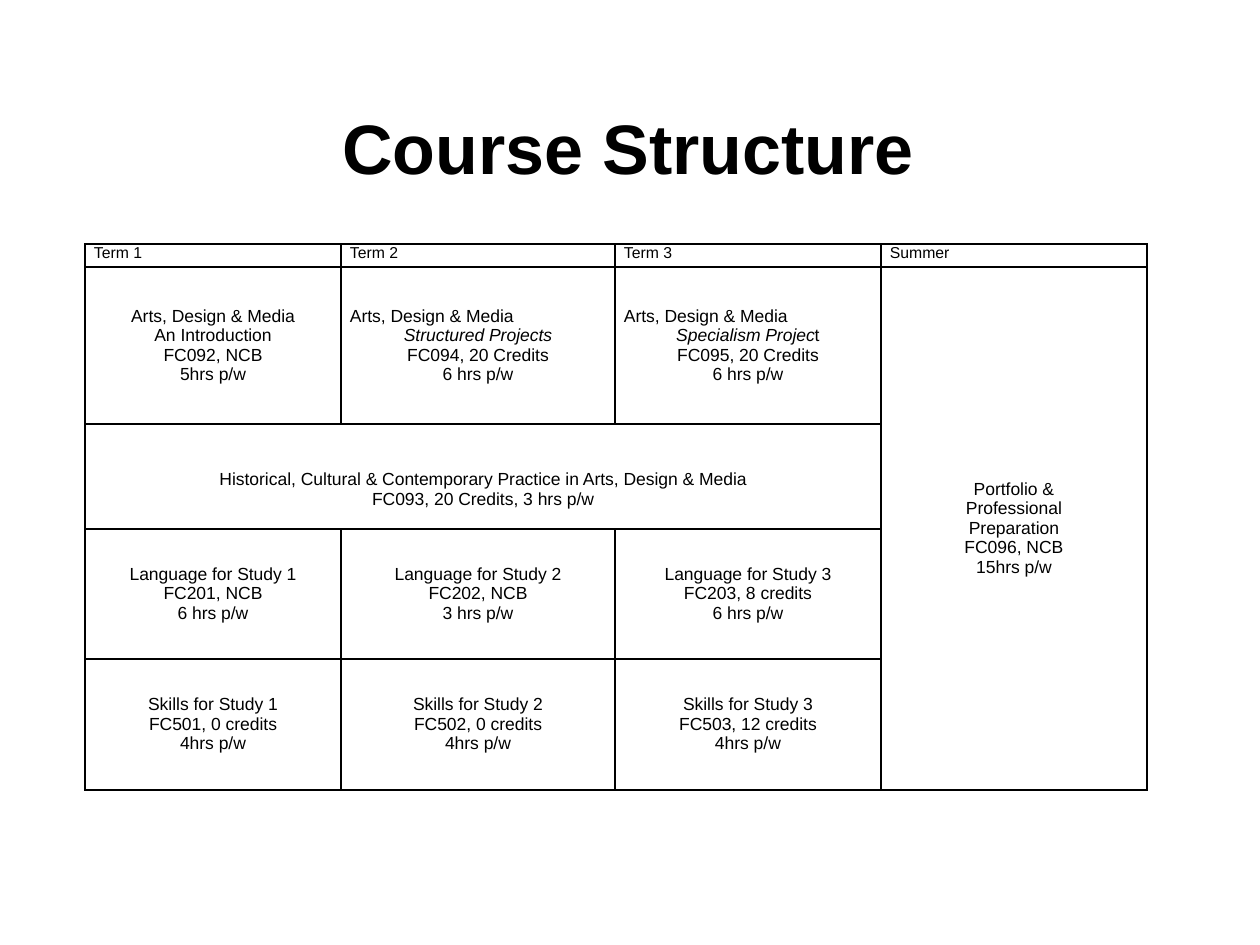
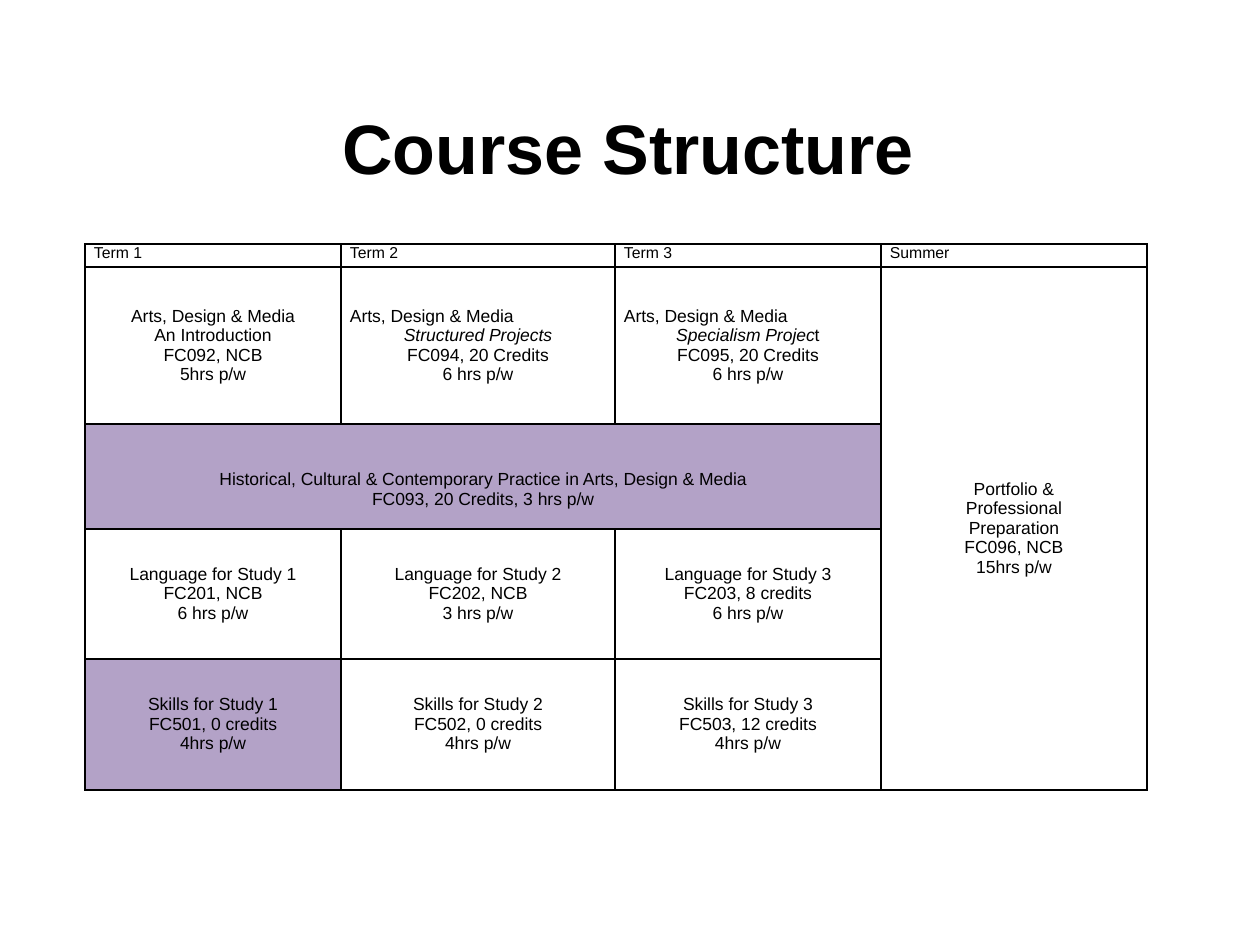
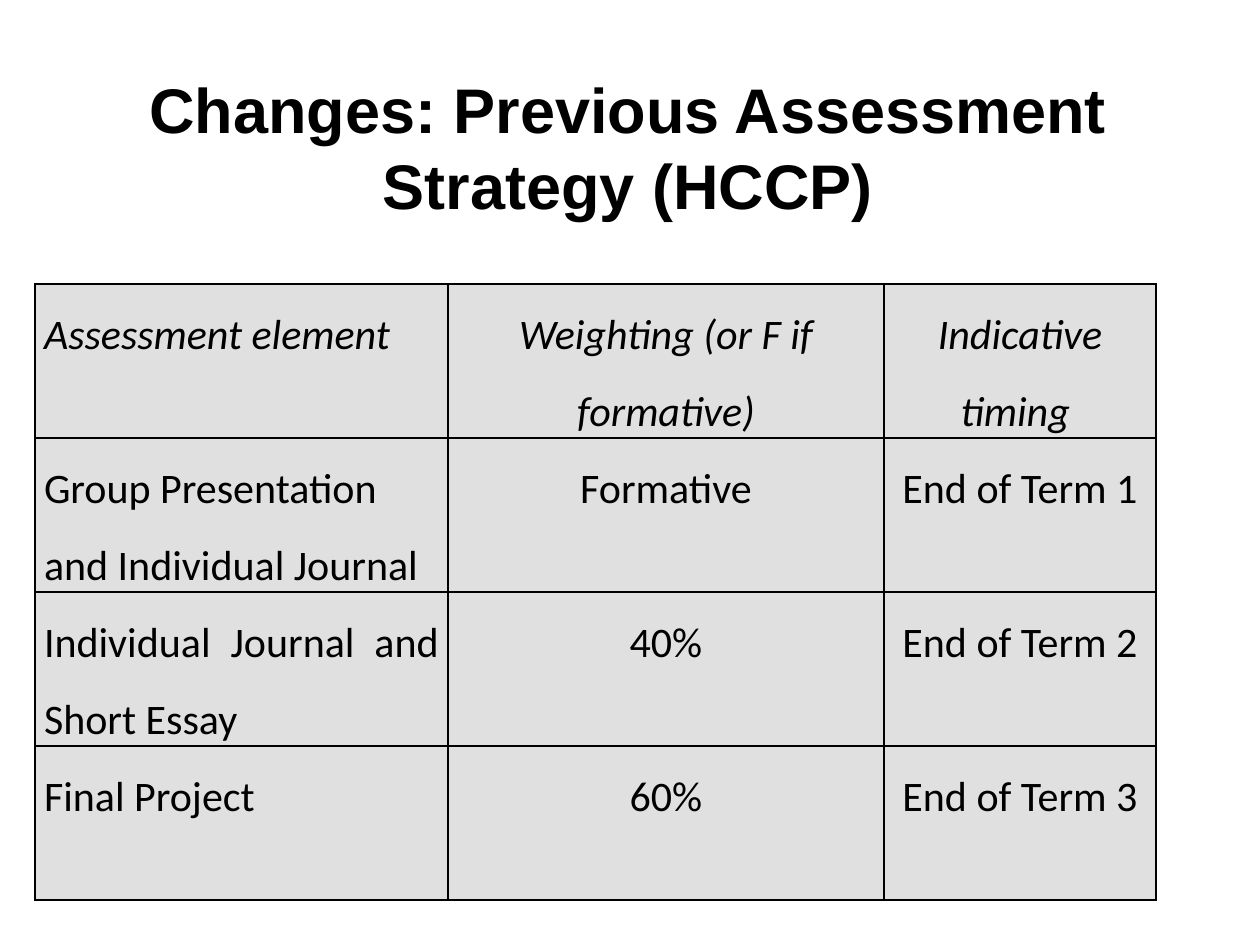
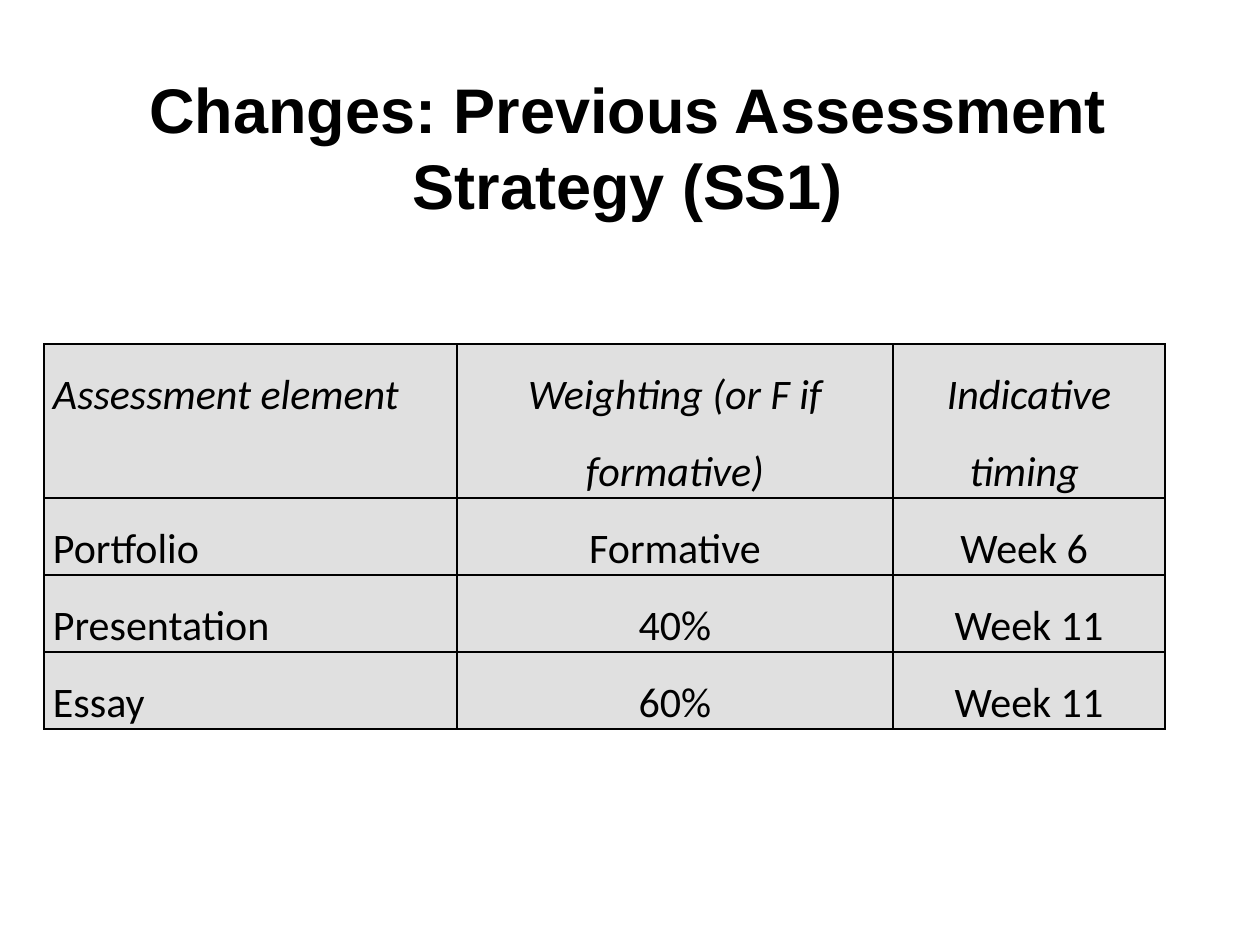
from lxml import etree
from pptx import Presentation
from pptx import util as u
from pptx.dml.color import RGBColor
from pptx.enum import text
from pptx.oxml.ns import qn

PX = u.Inches(1) / 126
BLACK = RGBColor(0x00, 0x00, 0x00)
PURPLE = RGBColor(0xB3, 0xA2, 0xC7)
GREY = RGBColor(0xE0, 0xE0, 0xE0)
LEFT, CENTER, JUSTIFY = text.PP_ALIGN.LEFT, text.PP_ALIGN.CENTER, text.PP_ALIGN.JUSTIFY
TOP, MIDDLE, BOTTOM = text.MSO_ANCHOR.TOP, text.MSO_ANCHOR.MIDDLE, text.MSO_ANCHOR.BOTTOM


def write(frame, content, alignment, spacing, style):
    for number, line in enumerate(content.split("\n")):
        para = frame.paragraphs[0] if number == 0 else frame.add_paragraph()
        para.alignment = alignment
        para.line_spacing = spacing
        for part, words in enumerate(line.split("_")):
            if words:
                span = para.add_run()
                span.text = words
                span.font.color.rgb = BLACK
                for name, value in style.items():
                    setattr(span.font, name, value)
                if part % 2:
                    span.font.italic = True


def add_grid(page, left, top, widths, heights):
    frame = page.shapes.add_table(
        len(heights), len(widths), int(left * PX), int(top * PX),
        int(sum(widths) * PX), int(sum(heights) * PX))
    grid = frame.table
    grid.first_row = grid.horz_banding = False
    for column, width in zip(grid.columns, widths):
        column.width = int(width * PX)
    for row, height in zip(grid.rows, heights):
        row.height = int(height * PX)
    for cell in grid.iter_cells():
        cell.margin_left = cell.margin_right = int(9 * PX)
        cell.margin_top = cell.margin_bottom = 0
        properties = cell._tc.get_or_add_tcPr()
        for side in ("a:lnL", "a:lnR", "a:lnT", "a:lnB"):
            line = etree.SubElement(properties, qn(side), w=str(u.Pt(1)))
            solid = etree.SubElement(line, qn("a:solidFill"))
            etree.SubElement(solid, qn("a:srgbClr"), val=str(BLACK))
        cell.fill.background()
    return grid


deck = Presentation()
deck.slide_width, deck.slide_height = int(1260 * PX), int(945 * PX)

titles = [
    ("Course Structure", 40),
    ("Course Structure", 40),
    ("Changes: Previous Assessment Strategy (HCCP)", 36),
    ("Changes: Previous Assessment Strategy (SS1)", 36),
]
pages = []
for title, size in titles:
    page = deck.slides.add_slide(deck.slide_layouts[6])
    box = page.shapes.add_textbox(*(int(length * PX) for length in (40, 79, 1176, 134)))
    box.text_frame.word_wrap = True
    box.text_frame.vertical_anchor = MIDDLE
    write(box.text_frame, title, CENTER, None,
          {"name": "Arial", "size": u.Pt(size), "bold": True})
    pages.append(page)

terms = ["Term 1", "Term 2", "Term 3", "Summer"]
modules = {
    (1, 0): "Arts, Design & Media\nAn Introduction\nFC092, NCB\n5hrs p/w",
    (1, 1): "Arts, Design & Media\n_Structured Projects_\nFC094, 20 Credits\n6 hrs p/w",
    (1, 2): "Arts, Design & Media\n_Specialism Projec_t\nFC095, 20 Credits\n6 hrs p/w",
    (1, 3): "Portfolio &\nProfessional\nPreparation\nFC096, NCB\n15hrs p/w",
    (2, 0): "Historical, Cultural & Contemporary Practice in Arts, Design & Media\n"
            "FC093, 20 Credits, 3 hrs p/w",
    (3, 0): "Language for Study 1\nFC201, NCB\n6 hrs p/w",
    (3, 1): "Language for Study 2\nFC202, NCB\n3 hrs p/w",
    (3, 2): "Language for Study 3\nFC203, 8 credits\n6 hrs p/w",
    (4, 0): "Skills for Study 1\nFC501, 0 credits\n4hrs p/w",
    (4, 1): "Skills for Study 2\nFC502, 0 credits\n4hrs p/w",
    (4, 2): "Skills for Study 3\nFC503, 12 credits\n4hrs p/w",
}
for page, highlighted in zip(pages[:2], ([], [(2, 0), (4, 0)])):
    grid = add_grid(page, 85, 244, [256, 274, 266, 266], [23, 157, 105, 130, 131])
    grid.cell(1, 3).merge(grid.cell(4, 3))
    grid.cell(2, 0).merge(grid.cell(2, 2))
    for column, term in enumerate(terms):
        write(grid.cell(0, column).text_frame, term, LEFT, None,
              {"name": "Arial", "size": u.Pt(9)})
    for place, module in modules.items():
        cell = grid.cell(*place)
        cell.vertical_anchor = MIDDLE
        write(cell.text_frame, module, CENTER, None, {"name": "Arial", "size": u.Pt(10)})
    for column in (1, 2):
        grid.cell(1, column).text_frame.paragraphs[0].alignment = LEFT
    history = grid.cell(2, 0)
    history.vertical_anchor = BOTTOM
    history.margin_bottom = int(20 * PX)
    for place in highlighted:
        cell = grid.cell(*place)
        cell.fill.solid()
        cell.fill.fore_color.rgb = PURPLE

headings = ("Assessment element", "Weighting (or F if formative)", "Indicative timing ")
assessments = [
    (35, 284, [154, 154, 154, 154], [
        ("Group Presentation and Individual Journal", "Formative", "End of Term 1"),
        ("Individual Journal and Short Essay", "40%", "End of Term 2"),
        ("Final Project", "60%", "End of Term 3"),
    ]),
    (44, 344, [154, 77, 77, 77], [
        ("Portfolio ", "Formative", "Week 6 "),
        ("Presentation ", "40%", "Week 11"),
        ("Essay ", "60%", "Week 11"),
    ]),
]
for page, (left, top, heights, elements) in zip(pages[2:], assessments):
    grid = add_grid(page, left, top, [413, 436, 272], heights)
    for row, entries in enumerate([headings, *elements]):
        for column, entry in enumerate(entries):
            cell = grid.cell(row, column)
            cell.vertical_anchor = TOP
            cell.fill.solid()
            cell.fill.fore_color.rgb = GREY
            alignment = CENTER if column else JUSTIFY
            if entry.startswith("Group"):
                alignment = LEFT
            write(cell.text_frame, entry, alignment, 1.5,
                  {"name": "Calibri", "size": u.Pt(24), "italic": row == 0})

deck.save("out.pptx")
